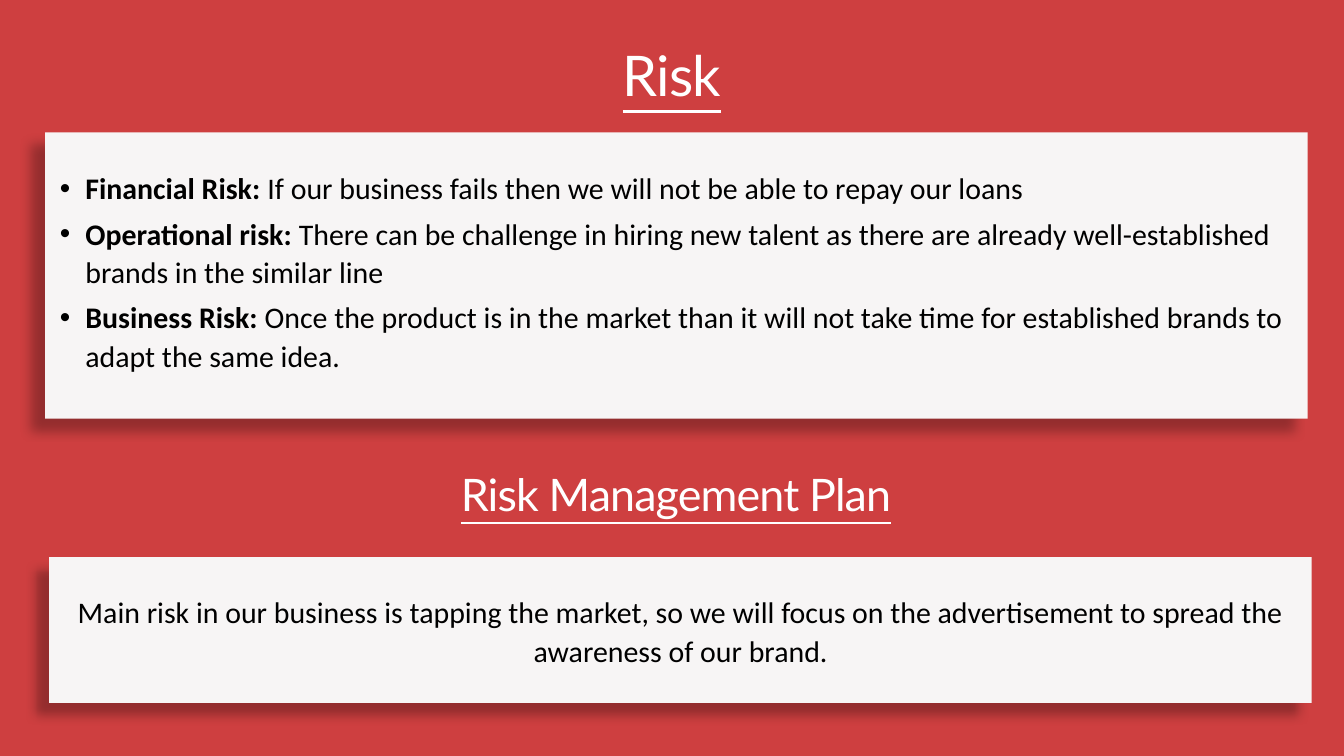
from lxml.etree import SubElement as Sub
from pptx import Presentation
from pptx.dml.color import RGBColor as Rgb
from pptx.enum.shapes import MSO_SHAPE as Kind
from pptx.enum.text import MSO_ANCHOR as Anchor, MSO_AUTO_SIZE as Fit, PP_ALIGN as Align
from pptx.oxml.ns import qn
from pptx.util import Inches, Pt

THEME = {
    "back": "CE3F40", "card": "F7F5F5", "shade": "000000",
    "light": "FFFFFF", "dark": "000000",
    "head": "Lato", "body": "Calibri",
    "big": 60, "mid": 48, "text": 32,
}

TITLE = "Risk"
RISKS = [
    ("Financial Risk:", " If our business fails then we will not be able to repay our loans"),
    ("Operational risk:", " There can be challenge in hiring new talent as there are already "
                          "well-established brands in the similar line"),
    ("Business Risk:", " Once the product is in the market than it will not take time for "
                       "established brands to adapt the same idea."),
]
PLAN = "Risk Management Plan"
NOTE = ("Main risk in our business is tapping the market, so we will focus on the "
        "advertisement to spread the awareness of our brand.")

CARDS = [(0.73, 8.29, 18.79, 2.17), (0.67, 1.97, 18.79, 4.26)]
HEAD = dict(font=THEME["head"], color=THEME["light"], line=True, track=-90, before=1)
BODY = dict(font=THEME["body"], color=THEME["dark"], size=THEME["text"],
            gap=1.07, before=3.8, after=3.8)


def place(shape, box):
    shape.left, shape.top, shape.width, shape.height = map(Inches, box)
    return shape


def card(slide, box):
    shape = slide.shapes.add_shape(Kind.RECTANGLE, *map(Inches, box))
    shape.fill.solid()
    shape.fill.fore_color.rgb = Rgb.from_string(THEME["card"])
    shape.line.fill.background()
    shape.shadow.inherit = False
    glow = Sub(shape.element.spPr.find(qn("a:effectLst")), qn("a:outerShdw"),
               blurRad=str(Pt(11.8)), dist=str(Pt(19.7)), dir=str(141 * 60000),
               algn="ctr", rotWithShape="0")
    tint = Sub(glow, qn("a:srgbClr"), val=THEME["shade"])
    Sub(tint, qn("a:alpha"), val="28000")
    slide.shapes._spTree.insert(2, shape.element)


def write(shape, rows, *, font, color, size, align=Align.CENTER, anchor=Anchor.TOP,
          gap=1.0, before=0, after=0, line=False, track=0, dot=False):
    frame = shape.text_frame
    frame.word_wrap, frame.auto_size = True, Fit.NONE
    frame.vertical_anchor = anchor
    for i, row in enumerate(rows):
        para = frame.add_paragraph() if i else frame.paragraphs[0]
        para.alignment, para.line_spacing = align, gap
        para.space_before, para.space_after = Pt(before), Pt(after)
        if dot:
            props = para._p.get_or_add_pPr()
            props.set("marL", str(Inches(0.38)))
            props.set("indent", str(-Inches(0.38)))
            Sub(props, qn("a:buFont"), typeface="Arial")
            Sub(props, qn("a:buChar"), char="•")
        for j, part in enumerate(row):
            run = para.add_run()
            run.text = part
            face = run.font
            face.name, face.size = font, Pt(size)
            face.bold = len(row) > 1 and j == 0
            face.underline = line
            face.color.rgb = Rgb.from_string(color)
            if track:
                run._r.get_or_add_rPr().set("spc", str(track))


def main():
    deck = Presentation()
    deck.slide_width, deck.slide_height = Inches(20), Inches(11.25)
    slide = deck.slides.add_slide(deck.slide_layouts[1])
    slide.background.fill.solid()
    slide.background.fill.fore_color.rgb = Rgb.from_string(THEME["back"])

    for box in reversed(CARDS):
        card(slide, box)

    title = place(slide.shapes.title, (8.26, 0.56, 3.48, 1.11))
    write(title, [[TITLE]], size=THEME["big"], **HEAD)
    risks = place(slide.placeholders[1], (0.79, 2.44, 18.42, 3.18))
    write(risks, RISKS, align=Align.LEFT, dot=True, **BODY)

    note = slide.shapes.add_textbox(*map(Inches, (0.67, 8.03, 18.92, 2.68)))
    write(note, [[NOTE]], anchor=Anchor.MIDDLE, **BODY)
    plan = slide.shapes.add_textbox(*map(Inches, (5.06, 6.89, 10, 0.91)))
    write(plan, [[PLAN]], size=THEME["mid"], **HEAD)

    deck.save("out.pptx")


if __name__ == "__main__":
    main()
